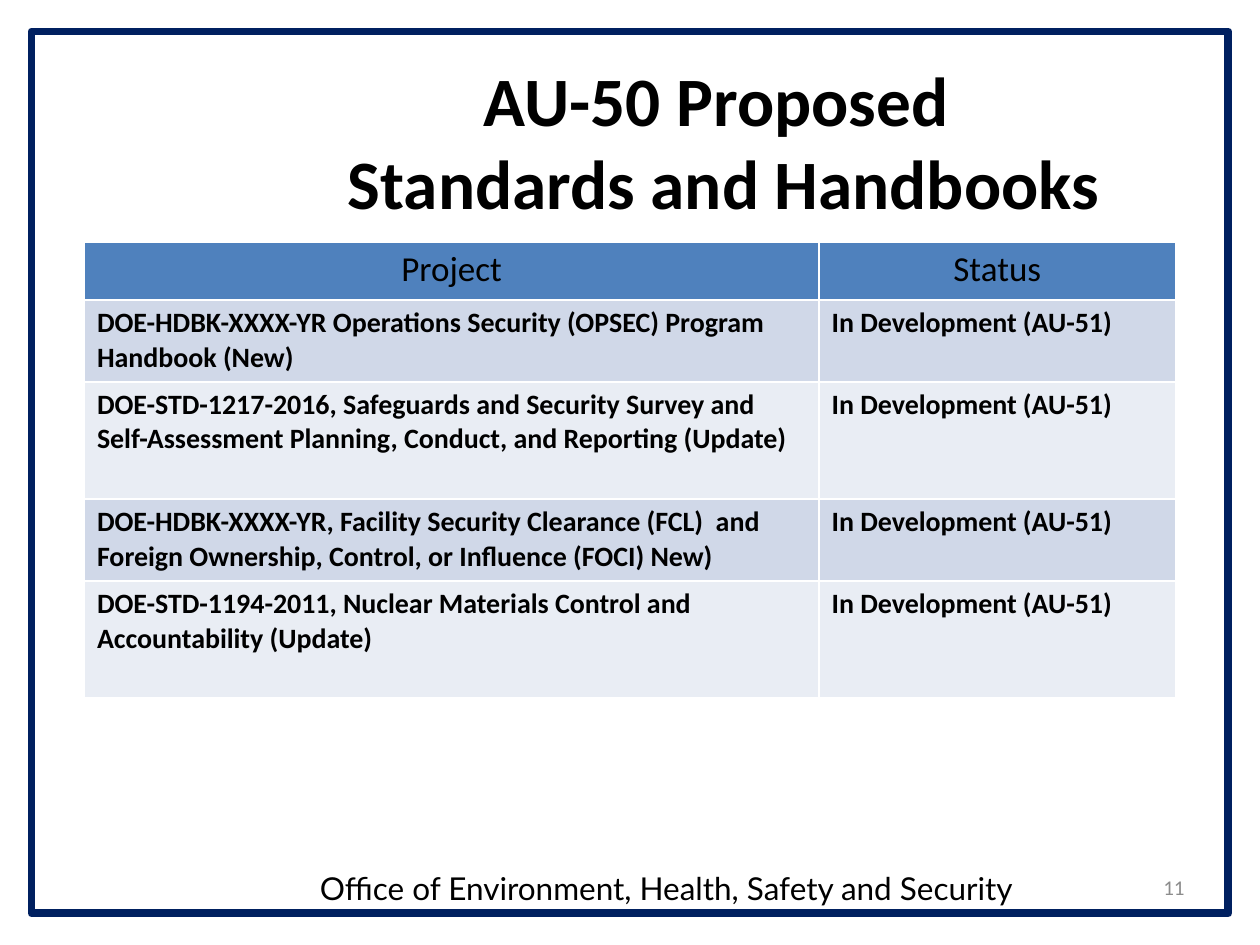
import pptx
import pptx.util
import pptx.dml.color
import pptx.enum.shapes
import pptx.enum.text

Inches, Pt = pptx.util.Inches, pptx.util.Pt
ALIGN = pptx.enum.text.PP_ALIGN
ANCHOR = pptx.enum.text.MSO_ANCHOR

TITLE_LINES = ["AU-50 Proposed ", "Standards and Handbooks"]
HEADER = ("Project", "Status")
STATUS = "In Development (AU-51)"
PROJECTS = [
    "DOE-HDBK-XXXX-YR Operations Security (OPSEC) Program Handbook (New)",
    "DOE-STD-1217-2016, Safeguards and Security Survey and "
    "Self-Assessment Planning, Conduct, and Reporting (Update)",
    "DOE-HDBK-XXXX-YR, Facility Security Clearance (FCL)  and "
    "Foreign Ownership, Control, or Influence (FOCI) New)",
    "DOE-STD-1194-2011, Nuclear Materials Control and Accountability (Update)",
]
OFFICE = "Office of Environment, Health, Safety and Security"
PAGE_NUMBER = "11"

SLIDE_W, SLIDE_H, MARGIN = 10, 7.5, 0.25
COLUMN_WIDTHS = (5.83, 2.83)
HEADER_HEIGHT = 0.46
ROW_HEIGHTS = (0.65, 0.93)
HEADER_FILL = "4F81BD"
BAND_FILLS = ("D0D8E8", "E9EDF4")


def color(hex_value):
    return pptx.dml.color.RGBColor.from_string(hex_value)


def write(frame, lines, size, align, bold=False, font="Calibri", ink="000000"):
    """Fill the first paragraph, with a line break between lines."""
    frame.word_wrap = True
    paragraph = frame.paragraphs[0]
    paragraph.alignment = align
    for index, line in enumerate(lines):
        if index:
            paragraph.add_line_break()
        run = paragraph.add_run()
        run.text = line
        run.font.name = font
        run.font.size = Pt(size)
        run.font.bold = bold
        run.font.color.rgb = color(ink)


def add_label(slide, box, anchor, *text, **style):
    frame = slide.shapes.add_textbox(*map(Inches, box)).text_frame
    frame.vertical_anchor = anchor
    write(frame, *text, **style)


def add_frame(slide):
    border = slide.shapes.add_shape(
        pptx.enum.shapes.MSO_SHAPE.RECTANGLE, Inches(MARGIN), Inches(MARGIN),
        Inches(SLIDE_W - 2 * MARGIN), Inches(SLIDE_H - 2 * MARGIN))
    border.shadow.inherit = False
    border.fill.background()
    border.line.color.rgb = color("002060")
    border.line.width = Pt(4.5)


def add_title(slide):
    title = slide.shapes.title
    title.left, title.top = Inches(1.92), Inches(0.75)
    title.width, title.height = Inches(7.65), Inches(0.72)
    title.text_frame.vertical_anchor = ANCHOR.MIDDLE
    title.text_frame.auto_size = pptx.enum.text.MSO_AUTO_SIZE.NONE
    write(title.text_frame, TITLE_LINES, 39.6, ALIGN.CENTER, bold=True)


def add_projects(slide):
    rows = [HEADER] + [(project, STATUS) for project in PROJECTS]
    heights = [HEADER_HEIGHT] + [ROW_HEIGHTS[i % 2] for i in range(len(PROJECTS))]
    table = slide.shapes.add_table(
        len(rows), len(HEADER), Inches(0.67), Inches(1.92),
        Inches(sum(COLUMN_WIDTHS)), Inches(sum(heights))).table
    for column, width in zip(table.columns, COLUMN_WIDTHS):
        column.width = Inches(width)
    for r, (texts, height) in enumerate(zip(rows, heights)):
        table.rows[r].height = Inches(height)
        for c, text in enumerate(texts):
            cell = table.cell(r, c)
            cell.fill.solid()
            cell.fill.fore_color.rgb = color(BAND_FILLS[(r - 1) % 2] if r else HEADER_FILL)
            if r:
                write(cell.text_frame, [text], 16, ALIGN.LEFT, bold=True)
            else:
                write(cell.text_frame, [text], 20, ALIGN.CENTER)


def main():
    deck = pptx.Presentation()
    deck.slide_width, deck.slide_height = Inches(SLIDE_W), Inches(SLIDE_H)
    slide = deck.slides.add_slide(deck.slide_layouts.get_by_name("Title Only"))
    add_frame(slide)
    add_label(slide, (2.25, 6.85, 6.08, 0.4), ANCHOR.TOP,
              [OFFICE], 18, ALIGN.CENTER, font="Lato")
    add_title(slide)
    add_projects(slide)
    add_label(slide, (8.45, 6.84, 1.05, 0.4), ANCHOR.MIDDLE,
              [PAGE_NUMBER], 12, ALIGN.RIGHT, ink="8C8C8C")
    deck.save("out.pptx")


if __name__ == "__main__":
    main()
